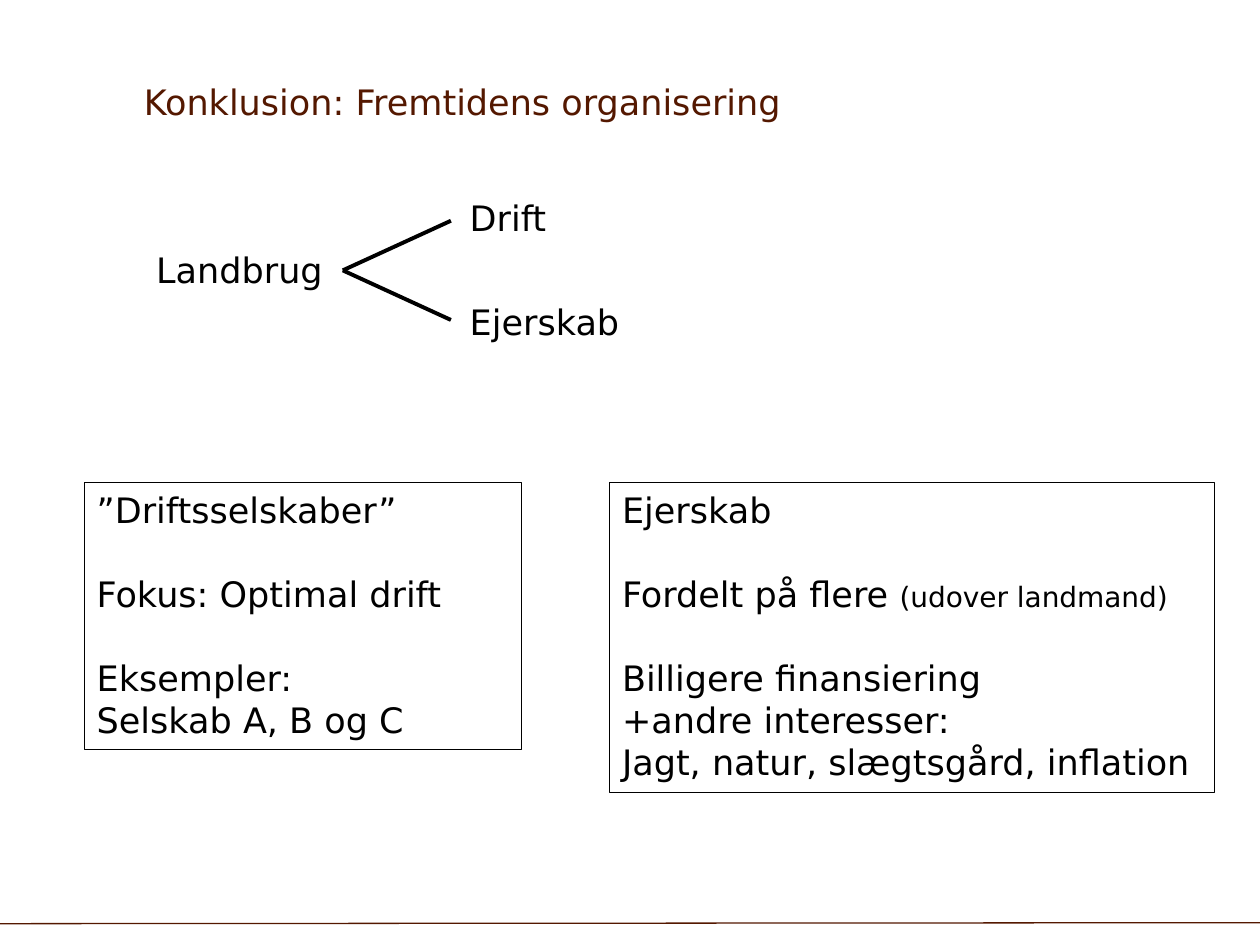
from lxml import etree
from pptx import Presentation
from pptx import util as u
from pptx.dml import color
from pptx.enum import shapes, text
from pptx.oxml import ns

FONT = "DejaVu Sans"
COLORS = {"title": "541800", "ink": "000000"}
LINE_HEIGHT = 24


def rgb(name):
    """Return a palette colour."""
    return color.RGBColor.from_string(COLORS[name])


def add_run(p, content, size=20, ink="ink"):
    """Append one formatted run to a paragraph."""
    r = p.add_run()
    r.text = content
    r.font.name, r.font.size = FONT, u.Pt(size)
    r.font.color.rgb = rgb(ink)


def add_line(s, start, end, width, ink):
    """Draw a plain line between two points in centimetres."""
    ends = [u.Cm(v) for v in (*start, *end)]
    line = s.shapes.add_connector(shapes.MSO_CONNECTOR.STRAIGHT, *ends)
    line.line.width = u.Pt(width)
    line.line.color.rgb = rgb(ink)
    etree.SubElement(line._element.spPr, ns.qn("a:effectLst"))


def add_title(s, box, content):
    """Place the heading in the title placeholder."""
    sp = s.shapes.title
    sp.left, sp.top, sp.width, sp.height = [u.Cm(v) for v in box]
    tf = sp.text_frame
    tf.margin_left = tf.margin_right = tf.margin_top = tf.margin_bottom = 0
    tf.vertical_anchor = text.MSO_ANCHOR.MIDDLE
    tf.auto_size = text.MSO_AUTO_SIZE.NONE
    tf.word_wrap = True
    p = tf.paragraphs[0]
    p.alignment = text.PP_ALIGN.LEFT
    p.line_spacing = 0.97
    add_run(p, content, ink="title")


def add_label(s, box, content):
    """Add a one-line text label."""
    tf = s.shapes.add_textbox(*[u.Cm(v) for v in box]).text_frame
    tf.word_wrap = False
    tf.auto_size = text.MSO_AUTO_SIZE.SHAPE_TO_FIT_TEXT
    add_run(tf.paragraphs[0], content)


def add_split(s, box, root, branches):
    """Draw a root label that forks into an upper and a lower branch."""
    left, top, width, height = box
    label_h, fork_x, tip_x, branch_x, rise = 1.12, 4.01, 6.19, 6.32, 1
    middle = top + height / 2
    for side in (-1, 1):
        add_line(s, (left + tip_x, middle + side * rise),
                 (left + fork_x, middle), 2.25, "ink")
    add_label(s, (left, middle - label_h / 2, 3.89, label_h), root)
    tops = (top, top + height - label_h)
    for y, (name, label_w) in zip(tops, branches):
        add_label(s, (left + branch_x, y, label_w, label_h), name)


def add_panel(s, box, groups):
    """Add an outlined panel of line groups set one line apart."""
    sp = s.shapes.add_shape(shapes.MSO_SHAPE.RECTANGLE, *[u.Cm(v) for v in box])
    sp.shadow.inherit = False
    sp.fill.background()
    sp.line.color.rgb = rgb("ink")
    sp.line.width = u.Pt(0.75)
    tf = sp.text_frame
    tf.word_wrap = True
    tf.auto_size = text.MSO_AUTO_SIZE.SHAPE_TO_FIT_TEXT
    tf.vertical_anchor = text.MSO_ANCHOR.TOP
    for g, lines in enumerate(groups):
        for i, runs in enumerate(lines):
            p = tf.add_paragraph() if g or i else tf.paragraphs[0]
            p.alignment = text.PP_ALIGN.LEFT
            if g and not i:
                p.space_before = u.Pt(LINE_HEIGHT)
            for content, size in runs:
                add_run(p, content, size)


def main():
    """Build and save the slide."""
    prs = Presentation()
    prs.slide_width, prs.slide_height = u.Cm(25.4), u.Cm(19.05)
    s = prs.slides.add_slide(prs.slide_layouts[5])
    add_line(s, (25.4, 18.6), (0, 18.62), 0.75, "title")
    add_title(s, (2.9, 1.32, 16.28, 1.52), "Konklusion: Fremtidens organisering")
    add_split(s, (2.9, 3.84, 9.93, 3.22), "Landbrug",
              [("Drift", 2.08), ("Ejerskab", 3.61)])
    add_panel(s, (1.7, 9.73, 8.81, 5.38), [
        [[("”Driftsselskaber”", 20)]],
        [[("Fokus: Optimal drift", 20)]],
        [[("Eksempler:", 20)], [("Selskab A, B og C", 20)]],
    ])
    add_panel(s, (12.29, 9.73, 12.19, 6.25), [
        [[("Ejerskab", 20)]],
        [[("Fordelt på flere ", 20), ("(udover landmand)", 16)]],
        [[("Billigere finansiering", 20)], [("+andre interesser:", 20)],
         [("Jagt, natur, slægtsgård, inflation", 20)]],
    ])
    prs.save("out.pptx")


if __name__ == "__main__":
    main()
